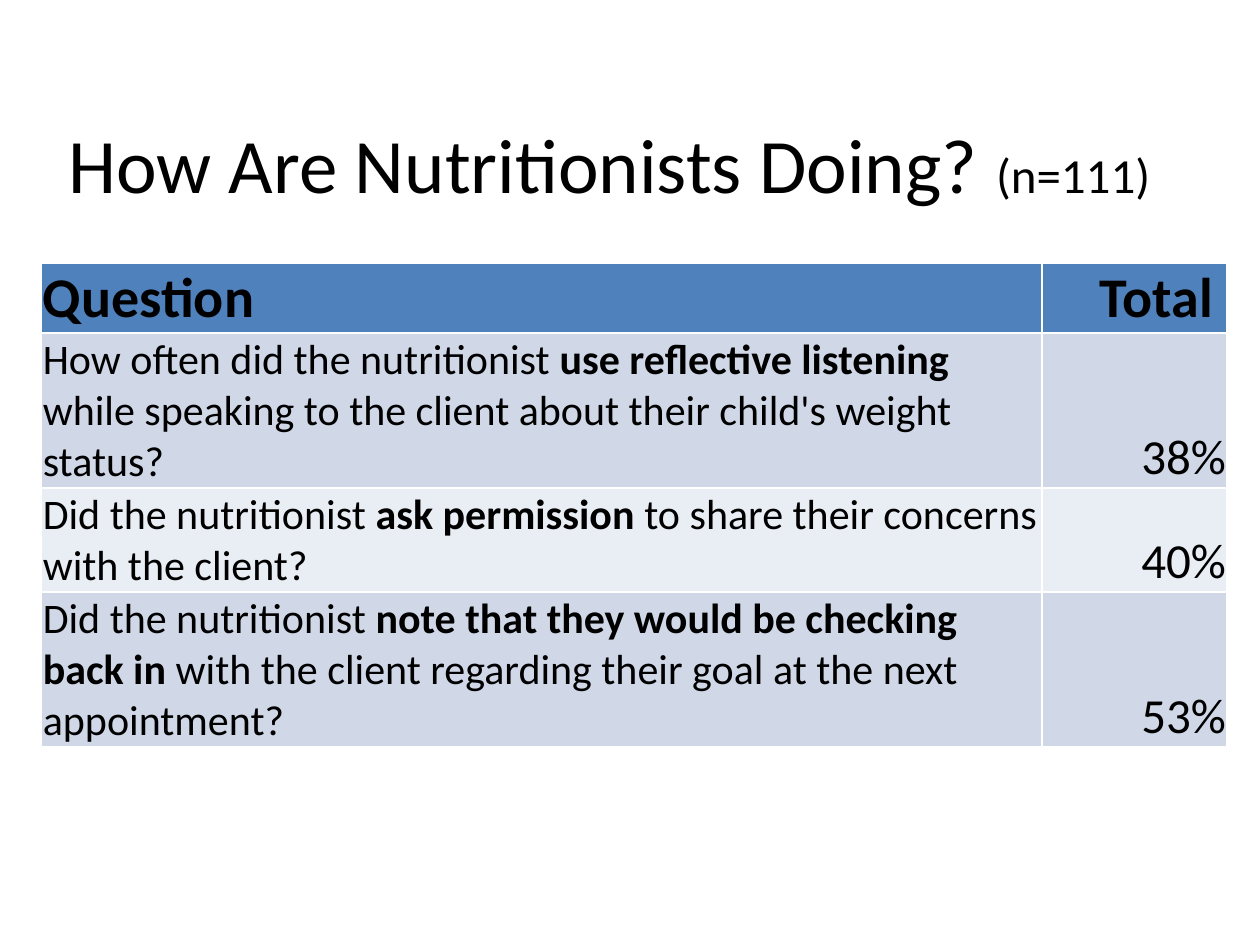
from pptx import Presentation
from pptx import util as u
from pptx.dml.color import RGBColor
from pptx.enum import text

COLORS = {"text": "000000", "header": "4F81BD", "odd": "D0D8E8", "even": "E9EDF4"}
FONT = "Calibri"

prs = Presentation()
prs.slide_width, prs.slide_height = u.Inches(10), u.Inches(7.5)
s = prs.slides.add_slide(prs.slide_layouts[5])


def add_runs(p, runs):
    """Add (text, size, bold) runs to a paragraph."""
    for words, size, bold in runs:
        r = p.add_run()
        r.text = words
        for name, value in {"name": FONT, "size": u.Pt(size), "bold": bold}.items():
            setattr(r.font, name, value)
        r.font.color.rgb = RGBColor.from_string(COLORS["text"])


# Title
title = s.shapes.title
place = {"left": 0.17, "top": 0.67, "width": 9.33, "height": 1.25}
for name, value in place.items():
    setattr(title, name, u.Inches(value))
tf = title.text_frame
tf.vertical_anchor = text.MSO_ANCHOR.MIDDLE
p = tf.paragraphs[0]
p.alignment = text.PP_ALIGN.CENTER
add_runs(p, [("How Are Nutritionists Doing? ", 44, False), ("(n=111)", 28, False)])

# Each row: the runs of the question, then those of the total
rows = [([("Question", 32, True)], [("Total ", 32, True)])]
answers = [
    ("How often did the nutritionist ", "use reflective listening",
     " while speaking to the client about their child's weight status?", "38%"),
    ("Did the nutritionist ", "ask permission",
     " to share their concerns with the client?", "40%"),
    ("Did the nutritionist ", "note that they would be checking back in",
     " with the client regarding their goal at the next appointment?", "53%"),
]
for start, key, end, total in answers:
    rows.append(([(start, 24, False), (key, 24, True), (end, 24, False)],
                 [(total, 28, False)]))

# Table; rows grow to fit their text
frame = s.shapes.add_table(len(rows), 2, u.Inches(0.33), u.Inches(2.09),
                           u.Inches(9.42), u.Inches(3.77))
table = frame.table
for column, width in zip(table.columns, (7.94, 1.47)):
    column.width = u.Inches(width)

cell_format = {"margin_left": u.Inches(0.01), "margin_right": u.Inches(0.01),
               "margin_top": u.Inches(0.01), "margin_bottom": 0,
               "vertical_anchor": text.MSO_ANCHOR.BOTTOM}
aligns = (text.PP_ALIGN.LEFT, text.PP_ALIGN.RIGHT)
for i, row in enumerate(rows):
    table.rows[i].height = u.Inches(0.56 if i else 0.43)
    band = "header" if i == 0 else ("odd" if i % 2 else "even")
    for j, runs in enumerate(row):
        cell = table.cell(i, j)
        for name, value in cell_format.items():
            setattr(cell, name, value)
        cell.fill.solid()
        cell.fill.fore_color.rgb = RGBColor.from_string(COLORS[band])
        p = cell.text_frame.paragraphs[0]
        p.alignment = aligns[j]
        add_runs(p, runs)

prs.save("out.pptx")
